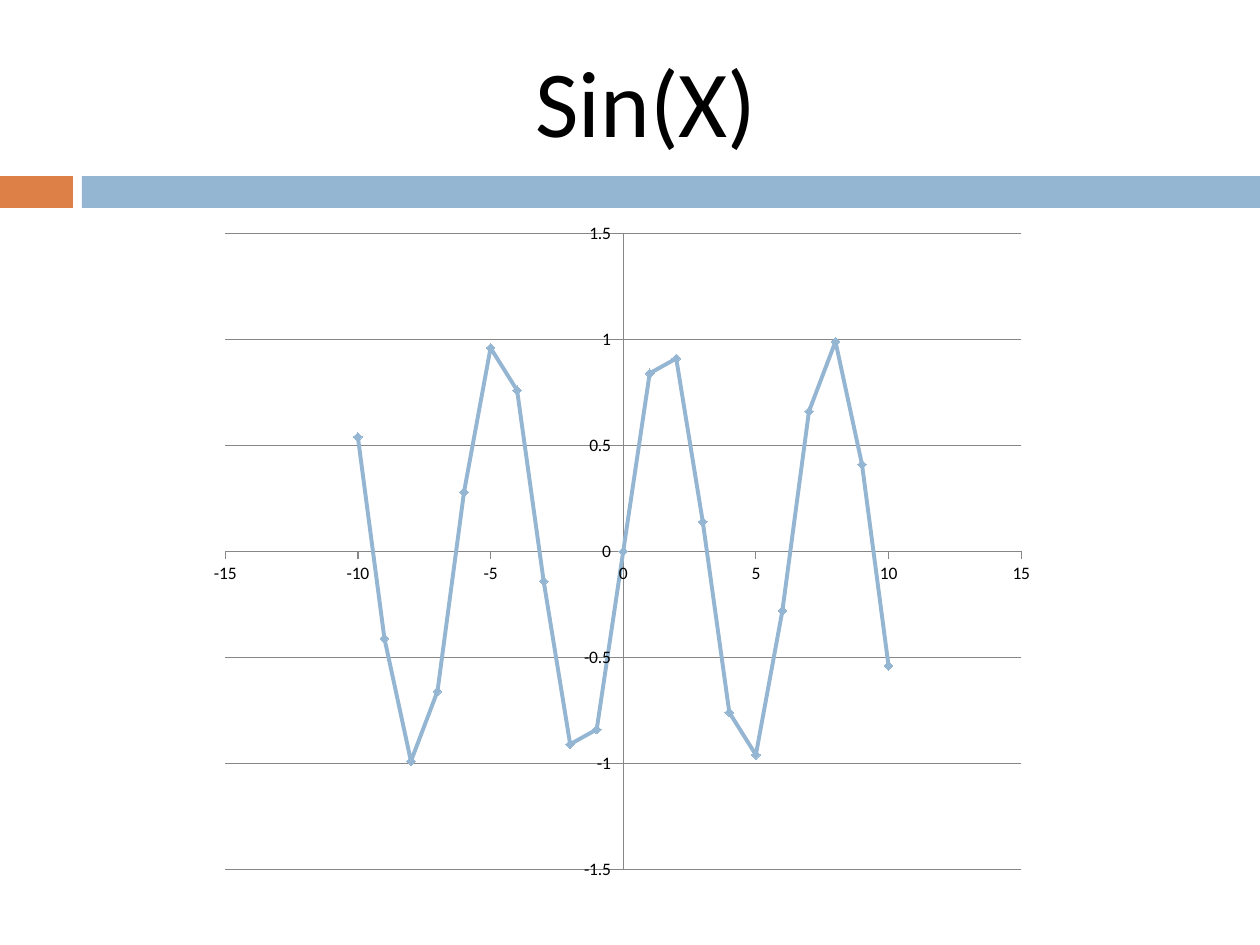
import math
import pptx
import pptx.util
import pptx.chart.data
import pptx.dml.color
import pptx.enum.chart
import pptx.enum.shapes
import pptx.enum.text

PX = 914400 // 126
FONT = "Calibri"
BLUE, ORANGE, BLACK, GRAY = "94B6D2", "DD8047", "000000", "878787"

TITLE = "Sin(X)"
TITLE_BOX = (84, 32, 1124, 136)
BANDS = [((0, 176, 73, 32), ORANGE), ((82, 176, 1178, 32), BLUE)]
CHART_BOX = (197, 210, 850, 683)
POINTS = [(x, round(math.sin(x), 2)) for x in range(-10, 11)]
X_SCALE = (-15, 15, 5)
Y_SCALE = (-1.5, 1.5, 0.5)


def emu(box):
    return [v * PX for v in box]


def rgb(color):
    return pptx.dml.color.RGBColor.from_string(color)


def format_font(font, size, color=BLACK):
    font.name = FONT
    font.size = pptx.util.Pt(size)
    font.color.rgb = rgb(color)


def format_line(line, color, width):
    line.color.rgb = rgb(color)
    line.width = pptx.util.Pt(width)


def add_band(s, box, color):
    sp = s.shapes.add_shape(pptx.enum.shapes.MSO_SHAPE.RECTANGLE, *emu(box))
    sp.shadow.inherit = False
    sp.fill.solid()
    sp.fill.fore_color.rgb = rgb(color)
    sp.line.fill.background()


def add_text(s, text, box, size, color=BLACK):
    tf = s.shapes.add_textbox(*emu(box)).text_frame
    tf.word_wrap = True
    tf.vertical_anchor = pptx.enum.text.MSO_ANCHOR.MIDDLE
    p = tf.paragraphs[0]
    p.alignment = pptx.enum.text.PP_ALIGN.CENTER
    r = p.add_run()
    r.text = text
    format_font(r.font, size, color)


def format_axis(axis, scale, grid):
    axis.minimum_scale, axis.maximum_scale, axis.major_unit = scale
    axis.has_major_gridlines = grid
    if grid:
        format_line(axis.major_gridlines.format.line, GRAY, 0.75)
    axis.major_tick_mark = pptx.enum.chart.XL_TICK_MARK.OUTSIDE
    axis.minor_tick_mark = pptx.enum.chart.XL_TICK_MARK.NONE
    axis.tick_label_position = pptx.enum.chart.XL_TICK_LABEL_POSITION.NEXT_TO_AXIS
    format_line(axis.format.line, GRAY, 0.75)
    format_font(axis.tick_labels.font, 10)


def add_curve(s, points, box):
    data = pptx.chart.data.XyChartData()
    series = data.add_series("Series 1")
    for x, y in points:
        series.add_data_point(x, y)
    kind = pptx.enum.chart.XL_CHART_TYPE.XY_SCATTER_SMOOTH
    chart = s.shapes.add_chart(kind, *emu(box), data).chart
    chart.has_title = False
    chart.has_legend = False
    format_font(chart.font, 10)
    format_axis(chart.category_axis, X_SCALE, False)
    format_axis(chart.value_axis, Y_SCALE, True)
    plot = chart.plots[0]
    plot.vary_by_categories = False
    curve = plot.series[0]
    curve.smooth = True
    format_line(curve.format.line, BLUE, 2.25)
    marker = curve.marker
    marker.style = pptx.enum.chart.XL_MARKER_STYLE.DIAMOND
    marker.size = 5
    marker.format.fill.solid()
    marker.format.fill.fore_color.rgb = rgb(BLUE)
    format_line(marker.format.line, BLUE, 0.75)


def main():
    prs = pptx.Presentation()
    prs.slide_width, prs.slide_height = pptx.util.Inches(10), pptx.util.Inches(7.5)
    s = prs.slides.add_slide(prs.slide_layouts[6])
    for box, color in BANDS:
        add_band(s, box, color)
    add_text(s, TITLE, TITLE_BOX, size=54)
    add_curve(s, POINTS, CHART_BOX)
    prs.save("out.pptx")


if __name__ == "__main__":
    main()
